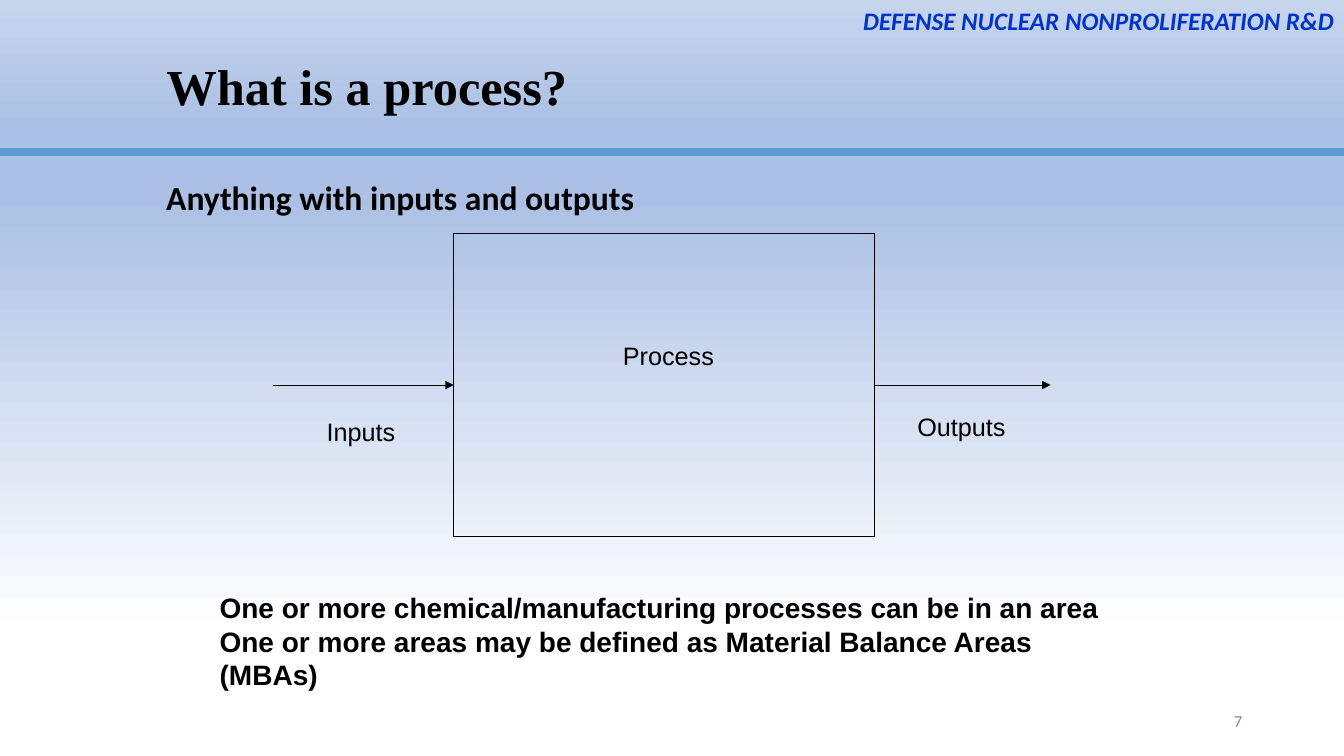
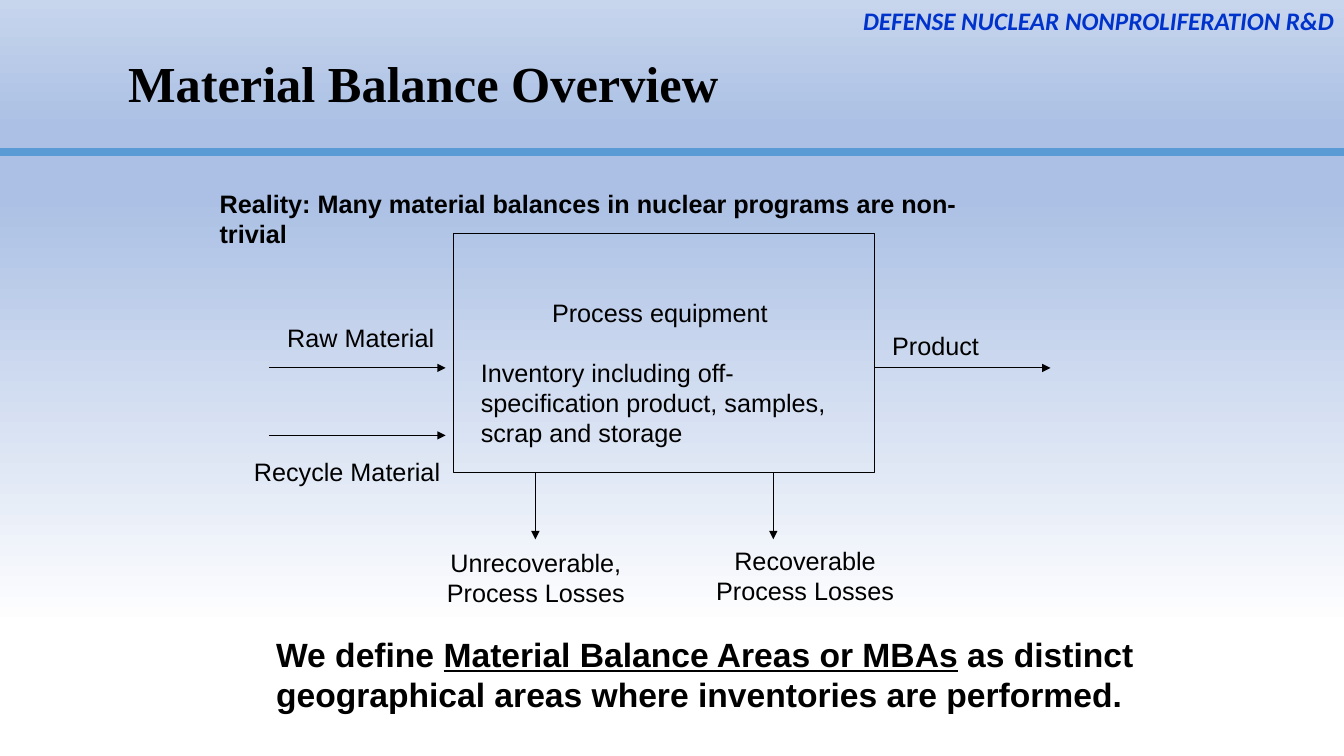
from lxml import etree
from pptx import Presentation
from pptx.dml.color import RGBColor
from pptx.enum import shapes, text
from pptx.oxml import parse_xml
from pptx.oxml.ns import nsdecls, qn
from pptx.util import Inches, Pt

BLACK, HEADER_BLUE, BAND_BLUE, NUMBER_GREY = "000000", "0033CC", "5B9BD5", "8C8C8C"
BACKDROP = [(0, "FFFFFF"), (17, "FFFFFF"), (74, "ABC0E4"), (83, "ABC0E4"), (100, "C7D5ED")]
WIDTH, HEIGHT = 13.33, 7.5
LEFT, CENTER, RIGHT = text.PP_ALIGN.LEFT, text.PP_ALIGN.CENTER, text.PP_ALIGN.RIGHT
MIDDLE = text.MSO_ANCHOR.MIDDLE
LEFT_SIDE, RIGHT_SIDE = 1, 3


def color(hex_code):
    return RGBColor.from_string(hex_code)


def inches(*lengths):
    return [Inches(length) for length in lengths]


class Deck:
    """Holds the shared style and the slide being built."""

    def __init__(self):
        self.prs = Presentation()
        self.prs.slide_width, self.prs.slide_height = inches(WIDTH, HEIGHT)
        self.paint_backdrop()

    def paint_backdrop(self):
        """Give the master a vertical gradient that all slides inherit."""
        fill = self.prs.slide_master.background.fill
        fill.solid()
        solid = self.prs.slide_master.element.cSld.find(".//" + qn("a:solidFill"))
        stops = "".join(
            f'<a:gs pos="{pos * 1000}"><a:srgbClr val="{shade}"/></a:gs>'
            for pos, shade in BACKDROP
        )
        solid.getparent().replace(solid, parse_xml(
            f'<a:gradFill rotWithShape="1" {nsdecls("a")}><a:gsLst>{stops}</a:gsLst>'
            '<a:lin ang="16200000" scaled="0"/></a:gradFill>'
        ))

    def add_slide(self, title, at):
        self.slide = self.prs.slides.add_slide(self.prs.slide_layouts[5])
        self.line((0, 1.51), (WIDTH, 1.51), BAND_BLUE, 6)
        header = self.label("DEFENSE NUCLEAR NONPROLIFERATION R&D", (8.51, 0, 4.82, 0.4),
                            font="Calibri", shade=HEADER_BLUE, bold=True, italic=True,
                            anchor=MIDDLE)
        header.text_frame.margin_left = header.text_frame.margin_right = Inches(0.05)

        heading = self.slide.shapes.title
        heading.left, heading.top, heading.width, heading.height = inches(*at)
        frame = heading.text_frame
        frame.text = title
        frame.auto_size = text.MSO_AUTO_SIZE.NONE
        frame.vertical_anchor = MIDDLE
        frame.paragraphs[0].line_spacing = 0.9
        self.style(frame.paragraphs[0], 36, "Times New Roman", bold=True)

    def style(self, paragraph, size, font, shade=BLACK, bold=False, italic=False, align=LEFT):
        paragraph.alignment = align
        face = paragraph.font
        face.size, face.name, face.bold, face.italic = Pt(size), font, bold, italic
        face.color.rgb = color(shade)

    def label(self, wording, at, size=18, font="Arial", wrap=False,
              anchor=text.MSO_ANCHOR.TOP, **look):
        """Add a text box; each line of the wording is a paragraph."""
        box = self.slide.shapes.add_textbox(*inches(*at))
        frame = box.text_frame
        frame.text = wording
        frame.word_wrap = wrap
        frame.vertical_anchor = anchor
        for paragraph in frame.paragraphs:
            self.style(paragraph, size, font, **look)
        return box

    def process_box(self, height):
        box = self.slide.shapes.add_shape(shapes.MSO_SHAPE.RECTANGLE,
                                          *inches(4.5, 2.32, 4.17, height))
        box.shadow.inherit = False
        box.fill.background()
        box.line.color.rgb = color(BLACK)
        box.line.width = Pt(0.75)
        return box

    def line(self, start, end, shade=BLACK, weight=0.75):
        connector = self.slide.shapes.add_connector(shapes.MSO_CONNECTOR.STRAIGHT,
                                                    *inches(*start, *end))
        connector.line.color.rgb = color(shade)
        connector.line.width = Pt(weight)
        etree.SubElement(connector.element.spPr, qn("a:effectLst"))
        return connector

    def arrow(self, start, end):
        connector = self.line(start, end)
        etree.SubElement(connector.line._get_or_add_ln(), qn("a:tailEnd"), type="triangle")
        return connector


def process_slide(deck):
    deck.add_slide("What is a process?", (1.55, 0.56, 8.08, 0.65))
    deck.label("Anything with inputs and outputs", (1.55, 1.71, 4.89, 0.5),
               size=24, font="Calibri", bold=True)
    process = deck.process_box(3)
    deck.arrow((2.71, 3.82), (4.5, 3.82)).end_connect(process, LEFT_SIDE)
    deck.arrow((8.67, 3.82), (10.42, 3.82)).begin_connect(process, RIGHT_SIDE)
    deck.label("Inputs", (3.14, 4.08, 0.88, 0.4))
    deck.label("Outputs", (9, 4.03, 1.08, 0.4))
    deck.label("Process", (6.08, 3.33, 1.1, 0.4), align=CENTER)
    deck.label("One or more chemical/manufacturing processes can be in an area\n"
               "One or more areas may be defined as Material Balance Areas (MBAs)",
               (2.08, 5.81, 9.2, 1.1), size=20, wrap=True, bold=True)
    deck.label("7", (9.42, 6.95, 3, 0.4), size=12, font="Calibri", wrap=True,
               anchor=MIDDLE, shade=NUMBER_GREY, align=RIGHT)


def balance_slide(deck):
    deck.add_slide("Material Balance Overview", (1.17, 0.48, 9, 0.75))
    deck.label("Reality: Many material balances in nuclear programs are non-trivial",
               (2.08, 1.82, 8.17, 0.4), bold=True)
    deck.process_box(2.37)
    contents = deck.label("Process equipment\nInventory including off-specification product, "
                          "samples, scrap and storage", (4.67, 2.9, 3.75, 1.6), wrap=True)
    equipment, inventory = contents.text_frame.paragraphs
    equipment.alignment = CENTER
    inventory.space_before = Pt(21)

    for flow_left, flow_top in ((2.67, 3.65), (2.67, 4.32), (8.67, 3.65)):
        deck.arrow((flow_left, flow_top), (flow_left + 1.75, flow_top))
    for loss_x in (5.31, 7.67):
        deck.arrow((loss_x, 4.69), (loss_x, 5.35))

    for flow, at in (("Raw Material", (2.75, 3.15, 1.66, 0.4)),
                     ("Recycle Material", (2.42, 4.48, 2.05, 0.4)),
                     ("Product", (8.75, 3.23, 1.06, 0.4))):
        deck.label(flow, at)
    for loss, left, top in (("Unrecoverable,", 4.33, 5.38), ("Recoverable", 7, 5.36)):
        deck.label(f"{loss}\nProcess Losses", (left, top, 1.97, 0.7), align=CENTER)

    definition = deck.label("", (2.64, 6.24, 10.05, 0.91), size=24, wrap=True, bold=True)
    sentence = definition.text_frame.paragraphs[0]
    for wording, underlined in (
            ("We define ", False),
            ("Material Balance Areas or MBAs", True),
            (" as distinct geographical areas where inventories are performed.", False)):
        run = sentence.add_run()
        run.text = wording
        run.font.underline = underlined


def main():
    deck = Deck()
    process_slide(deck)
    balance_slide(deck)
    deck.prs.save("out.pptx")


if __name__ == "__main__":
    main()
